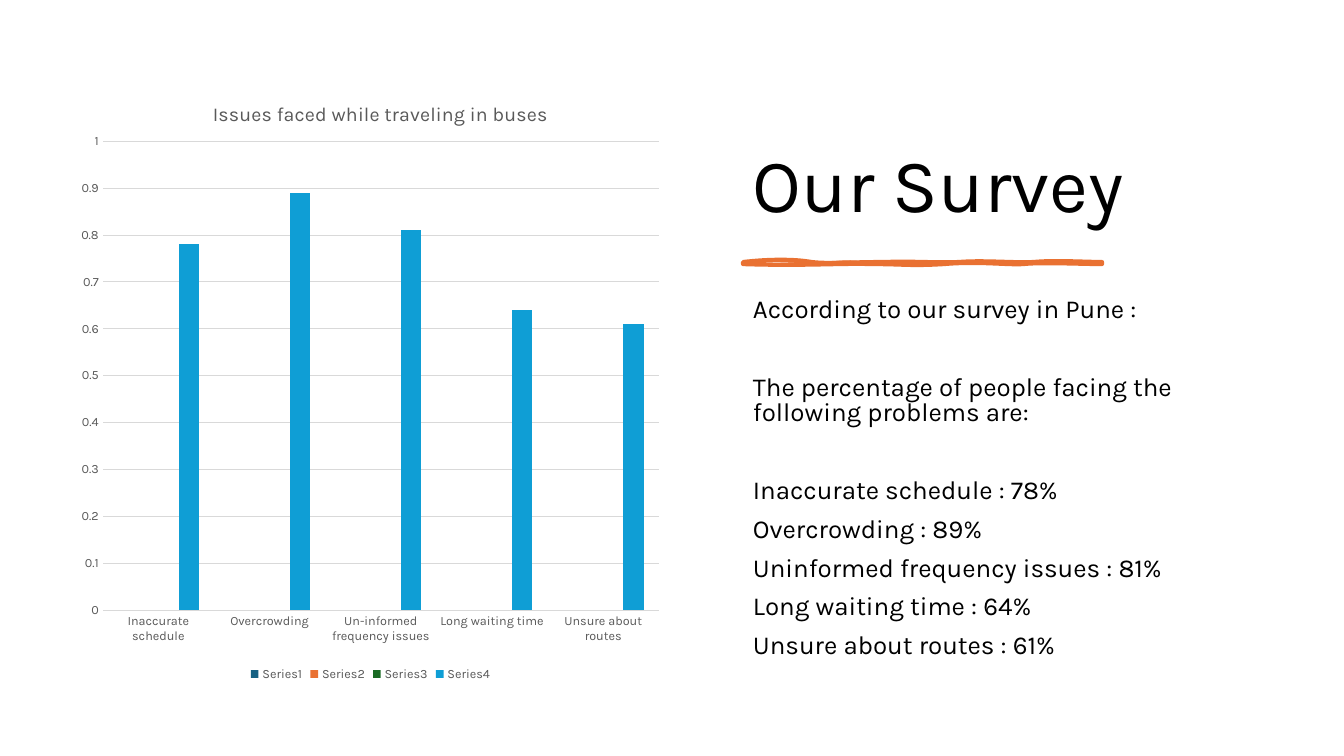
from copy import deepcopy
from dataclasses import dataclass

from lxml import etree
from pptx import Presentation
from pptx import util as u
from pptx.chart.data import CategoryChartData
from pptx.dml.color import RGBColor
from pptx.enum import chart as ch
from pptx.enum import text as tx
from pptx.oxml import ns

COLS, ROWS = 1333, 750  # grid cells across and down the slide
WIDE, HIGH = u.Inches(13.33), u.Inches(7.5)
FONT, INK, GREY, RULE, RUST = "Karla", "000000", "595959", "D9D9D9", "E97132"


@dataclass
class Box:
    """Left, top, width and height in grid cells."""
    x: float
    y: float
    w: float
    h: float

    def place(self) -> tuple:
        return col(self.x), row(self.y), col(self.w), row(self.h)


@dataclass
class Line:
    text: str
    before: float = 10


@dataclass
class Series:
    color: str
    vals: tuple = (None,) * 5


GAP = 38
LINES = [
    Line("According to our survey in Pune :"),
    Line("The percentage of people facing the following problems are:", GAP),
    Line("Inaccurate schedule : 78%", GAP),
    Line("Overcrowding : 89%"),
    Line("Uninformed frequency issues : 81%"),
    Line("Long waiting time : 64%"),
    Line("Unsure about routes : 61%"),
]
CATS = ["Inaccurate schedule", "Overcrowding", "Un-informed frequency issues",
        "Long waiting time", "Unsure about routes"]
SERIES = [
    Series("156082"),
    Series(RUST),
    Series("196B24"),
    Series("0F9ED5", (0.78, 0.89, 0.81, 0.64, 0.61)),
]
# Cubic curves of three points each, all from one start
START = (737, 260)
EDGE = [
    (763, 257, 788, 257, 805, 260), (822, 262, 844, 260, 876, 260),
    (908, 259, 927, 261, 951, 260), (975, 258, 1005, 261, 1025, 260),
    (1045, 258, 1078, 260, 1093, 260), (1093, 260, 1093, 261, 1093, 262),
    (1075, 262, 1031, 260, 1015, 262), (998, 263, 971, 259, 936, 262),
    (902, 264, 897, 262, 865, 262), (833, 261, 798, 264, 737, 262),
    (737, 261, 737, 260, 737, 260),
]
BODY = [
    (769, 262, 777, 260, 805, 260), (833, 259, 836, 257, 865, 260),
    (894, 262, 928, 261, 943, 260), (959, 258, 994, 262, 1011, 260),
    (1029, 257, 1064, 263, 1093, 260), (1093, 260, 1093, 261, 1093, 262),
    (1078, 261, 1039, 264, 1022, 262), (1005, 259, 976, 262, 943, 262),
    (911, 261, 906, 260, 883, 262), (860, 263, 846, 261, 812, 262),
    (778, 262, 759, 261, 737, 262), (737, 261, 737, 260, 737, 260),
]


def col(n: float) -> int:
    return round(WIDE * n / COLS)


def row(n: float) -> int:
    return round(HIGH * n / ROWS)


def rgb(code: str) -> RGBColor:
    return RGBColor.from_string(code)


def style(font, size: float, color: str) -> None:
    font.name, font.size, font.bold = FONT, u.Pt(size), False
    font.color.rgb = rgb(color)


def write(slide, box: Box, lines: list, *, size: float, lead: float,
          anchor=tx.MSO_ANCHOR.TOP) -> None:
    frame = slide.shapes.add_textbox(*box.place()).text_frame
    frame.word_wrap, frame.vertical_anchor = True, anchor
    for i, line in enumerate(lines):
        para = frame.add_paragraph() if i else frame.paragraphs[0]
        para.line_spacing, para.space_before = lead, u.Pt(line.before)
        run = para.add_run()
        run.text = line.text
        style(run.font, size, INK)


def bend(track) -> None:
    """Turn each three line points of an outline into one curve."""
    legs = track.findall(ns.qn("a:lnTo"))
    for i in range(0, len(legs), 3):
        curve = etree.Element(ns.qn("a:cubicBezTo"))
        legs[i].addprevious(curve)
        for leg in legs[i:i + 3]:
            curve.append(leg[0])
            track.remove(leg)


def brush(slide) -> None:
    """Draw the underline: a stroked edge and a filled body in one shape."""
    pen = slide.shapes.build_freeform(col(START[0]), row(START[1]))
    for i, curves in enumerate((EDGE, BODY)):
        if i:
            pen.move_to(col(START[0]), row(START[1]))
        pen.add_line_segments([(col(c[k]), row(c[k + 1]))
                               for c in curves for k in (0, 2, 4)], close=True)
    shape = pen.convert_to_shape()
    shape.shadow.inherit = False
    shape.fill.solid()
    shape.fill.fore_color.rgb = rgb(RUST)
    shape.line.color.rgb, shape.line.width = rgb(RUST), u.Pt(3)
    edge = next(shape._element.iter(ns.qn("a:path")))
    body = deepcopy(edge)
    edge.addnext(body)
    cut = 3 * len(EDGE) + 2  # start, line points and close
    for node in edge[cut:]:
        edge.remove(node)
    for node in body[:cut]:
        body.remove(node)
    edge.set("fill", "none")
    body.set("stroke", "0")
    bend(edge)
    bend(body)


def pin(node, spot: int, **vals) -> None:
    """Fix a chart part's place, in percent of the chart."""
    for old in node.findall(ns.qn("c:layout")):
        node.remove(old)
    lay = etree.Element(ns.qn("c:layout"))
    man = etree.SubElement(lay, ns.qn("c:manualLayout"))
    for key, val in vals.items():
        val = val if isinstance(val, str) else f"{val / 100:.4f}"
        etree.SubElement(man, ns.qn("c:" + key)).set("val", val)
    node.insert(spot, lay)


def plot(slide, box: Box) -> None:
    data = CategoryChartData()
    data.categories = CATS
    for item in SERIES:
        data.add_series("", item.vals)
    chart = slide.shapes.add_chart(
        ch.XL_CHART_TYPE.COLUMN_CLUSTERED, *box.place(), data).chart
    style(chart.font, 10, INK)
    bars = chart.plots[0]
    bars.gap_width, bars.overlap, bars.vary_by_categories = 150, 0, False
    for bar, item in zip(bars.series, SERIES):
        bar.format.fill.solid()
        bar.format.fill.fore_color.rgb = rgb(item.color)
        # Unnamed series get their numbered default in the legend
        bar._element.remove(bar._element.find(ns.qn("c:tx")))
    for axis in (chart.category_axis, chart.value_axis):
        axis.major_tick_mark = axis.minor_tick_mark = ch.XL_TICK_MARK.NONE
        axis.format.line.fill.background()
        style(axis.tick_labels.font, 9, GREY)
    axis = chart.value_axis
    axis.minimum_scale, axis.maximum_scale, axis.major_unit = 0, 1, 0.1
    grid = axis.major_gridlines.format.line
    grid.color.rgb, grid.width = rgb(RULE), u.Pt(0.75)
    chart.has_legend = True
    chart.legend.position = ch.XL_LEGEND_POSITION.BOTTOM
    chart.legend.include_in_layout = False
    style(chart.legend.font, 9, GREY)
    run = chart.chart_title.text_frame.paragraphs[0].add_run()
    run.text = "Issues faced while traveling in buses"
    style(run.font, 14, GREY)
    pin(chart.chart_title._element, 1, xMode="edge", yMode="edge", x=23.2, y=4.4)
    pin(chart._chartSpace.chart.plotArea, 0, layoutTarget="inner",
        xMode="edge", yMode="edge", x=5.5, y=11.5, w=92.4, h=76.3)


def main() -> None:
    deck = Presentation()
    deck.slide_width, deck.slide_height = WIDE, HIGH
    slide = deck.slides.add_slide(deck.slide_layouts[6])
    write(slide, Box(737, 70, 527, 162), [Line("Our Survey", 0)],
          size=54, lead=0.9, anchor=tx.MSO_ANCHOR.BOTTOM)
    brush(slide)
    write(slide, Box(737, 291, 527, 388), LINES, size=18.5, lead=0.8)
    plot(slide, Box(69, 70, 597, 610))
    deck.save("out.pptx")


if __name__ == "__main__":
    main()
